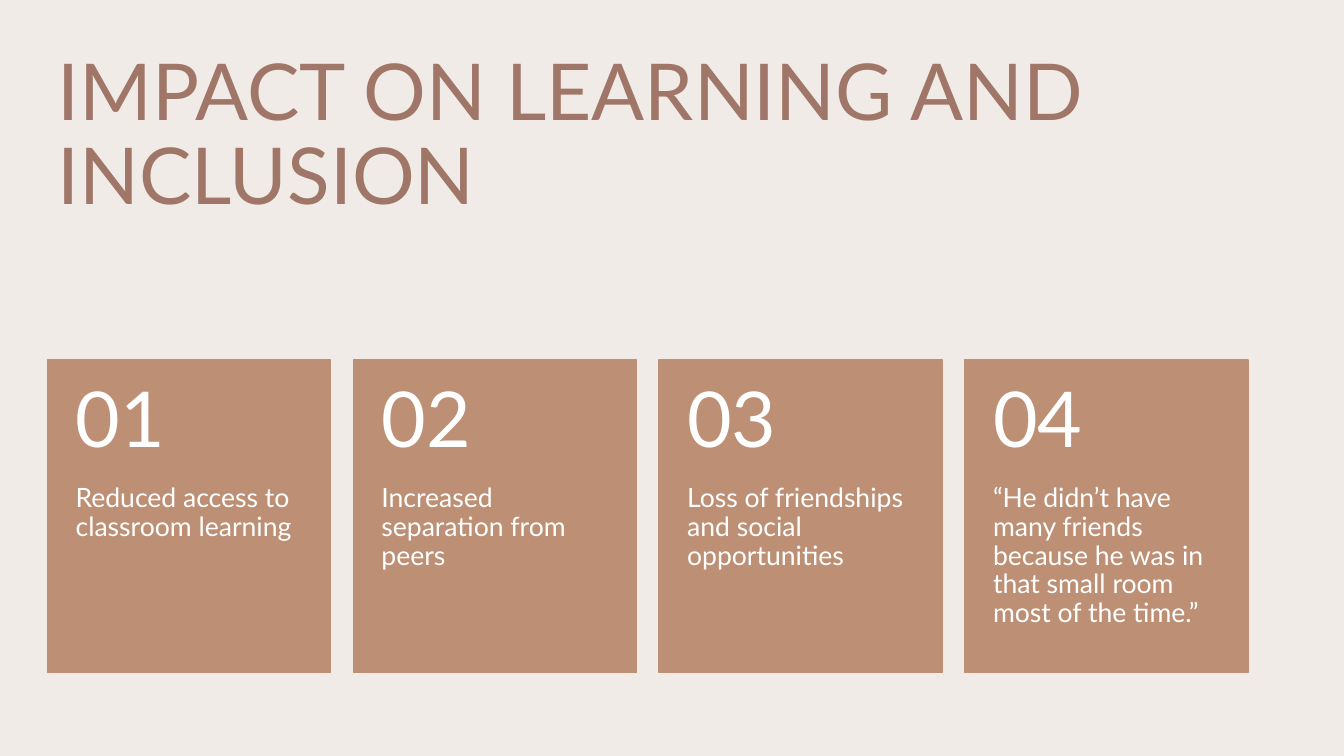
import dataclasses

import pptx
import pptx.dml.color
import pptx.enum.shapes
import pptx.enum.text
import pptx.util

Inches = pptx.util.Inches
Anchor = pptx.enum.text.MSO_ANCHOR


@dataclasses.dataclass(frozen=True)
class Theme:
    font: str = "Lato"
    background: str = "F0EBE6"
    heading: str = "9F7667"
    card: str = "BD9075"
    card_text: str = "FFFFFF"
    title_size: int = 56
    number_size: int = 55
    body_size: int = 19


THEME = Theme()
LEFT = 0.47
CARD_TOP = 3.57
CARD_WIDTH = 2.81
CARD_PITCH = 3.033
NUMBER_HEIGHT = 1.24
BODY_HEIGHT = 1.86
CARD_TEXTS = [
    "Reduced access to classroom learning",
    "Increased separation from peers",
    "Loss of friendships and social opportunities",
    "“He didn’t have many friends because he was in that small room most of the time.”",
]


def color(value):
    return pptx.dml.color.RGBColor.from_string(value)


def write_text(box, text, size, ink, anchor, insets):
    frame = box.text_frame
    frame.word_wrap = True
    frame.auto_size = pptx.enum.text.MSO_AUTO_SIZE.NONE
    frame.vertical_anchor = anchor
    (frame.margin_left, frame.margin_top,
     frame.margin_right, frame.margin_bottom) = map(Inches, insets)
    para = frame.paragraphs[0]
    para.alignment = pptx.enum.text.PP_ALIGN.LEFT
    para.line_spacing = 0.9
    para.space_before = pptx.util.Pt(0)
    span = para.add_run()
    span.text = text
    span.font.name = THEME.font
    span.font.size = pptx.util.Pt(size)
    span.font.color.rgb = color(ink)


def add_title(page, text):
    title = page.shapes.title
    title.left, title.top = Inches(LEFT), Inches(0.47)
    title.width, title.height = Inches(11.91), Inches(1.78)
    write_text(title, text, THEME.title_size, THEME.heading, Anchor.TOP,
               (0.1, 0.05, 0.1, 0.05))


def add_card_text(group, left, top, height, text, size, anchor, insets):
    box = group.shapes.add_textbox(
        Inches(left), Inches(top), Inches(CARD_WIDTH), Inches(height))
    write_text(box, text, size, THEME.card_text, anchor, insets)


def add_card(group, left, number, text):
    card = group.shapes.add_shape(
        pptx.enum.shapes.MSO_SHAPE.RECTANGLE, Inches(left), Inches(CARD_TOP),
        Inches(CARD_WIDTH), Inches(NUMBER_HEIGHT + BODY_HEIGHT))
    card.shadow.inherit = False
    card.fill.solid()
    card.fill.fore_color.rgb = color(THEME.card)
    card.line.color.rgb = color(THEME.card)
    card.line.width = pptx.util.Pt(1)
    add_card_text(group, left, CARD_TOP + NUMBER_HEIGHT, BODY_HEIGHT, text,
                  THEME.body_size, Anchor.TOP, (0.28, 0, 0.28, 0.36))
    add_card_text(group, left, CARD_TOP, NUMBER_HEIGHT, f"{number:02d}",
                  THEME.number_size, Anchor.MIDDLE, (0.28, 0.18, 0.28, 0.18))


def main():
    deck = pptx.Presentation()
    deck.slide_width, deck.slide_height = Inches(13.33), Inches(7.5)
    page = deck.slides.add_slide(deck.slide_layouts.get_by_name("Title Only"))
    page.background.fill.solid()
    page.background.fill.fore_color.rgb = color(THEME.background)
    add_title(page, "IMPACT ON LEARNING AND INCLUSION")
    cards = page.shapes.add_group_shape()
    for index, text in enumerate(CARD_TEXTS):
        add_card(cards, LEFT + index * CARD_PITCH, index + 1, text)
    deck.save("out.pptx")


if __name__ == "__main__":
    main()
